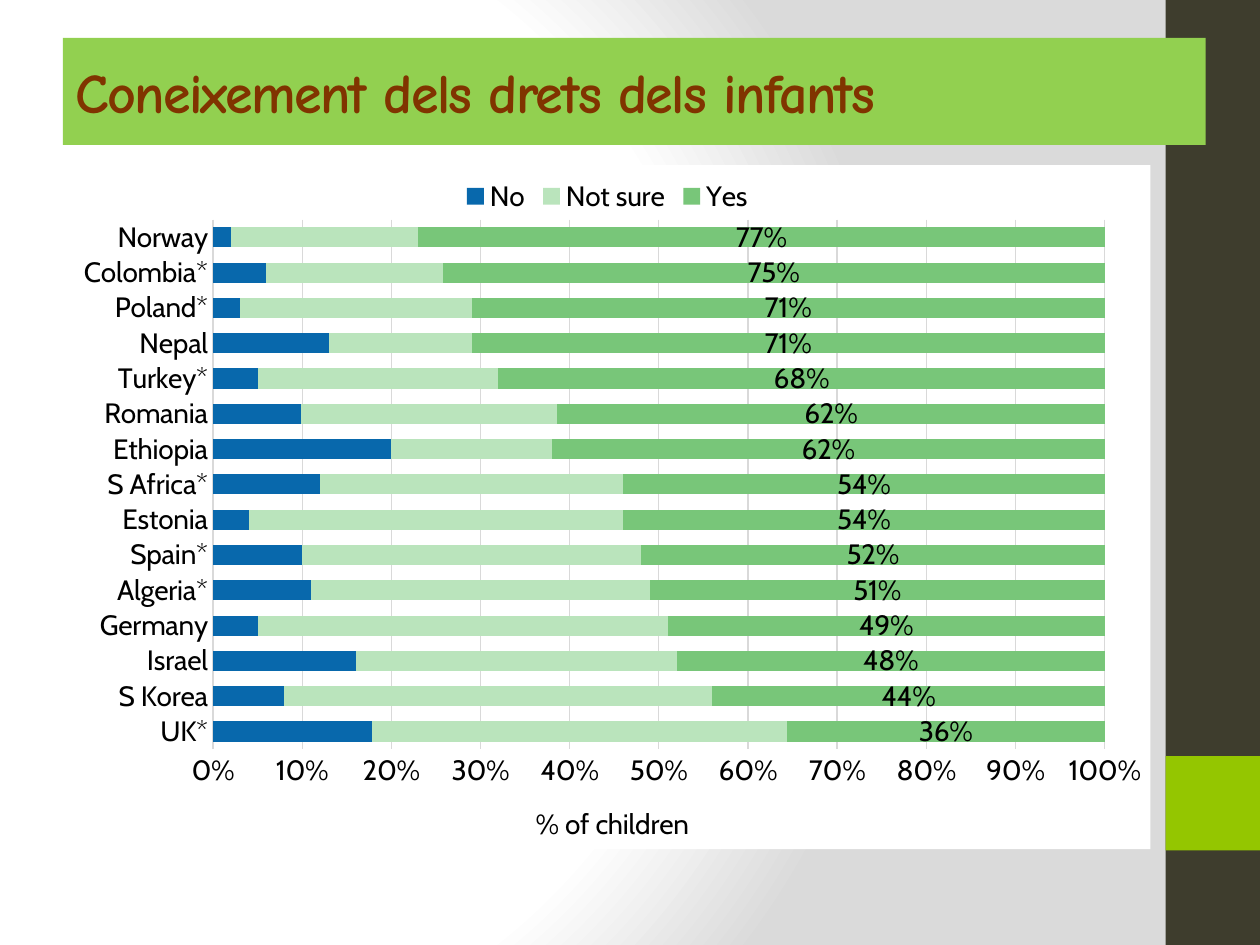
import pptx
import pptx.chart.data
import pptx.dml.color
import pptx.enum.chart
import pptx.enum.shapes
import pptx.enum.text
import pptx.oxml
import pptx.util

Inches, Pt = pptx.util.Inches, pptx.util.Pt
enum = pptx.enum.chart

COLORS = {
    "white": "FFFFFF", "grey": "DADADA", "dark": "3E3D2D", "lime": "94C600",
    "band": "92D050", "brown": "803400", "black": "000000", "grid": "D9D9D9",
    "No": "0868AC", "Not sure": "BAE4BC", "Yes": "78C679",
}
TITLE = "Coneixement dels drets dels infants"
AXIS = "% of children"
NAMES = ("No", "Not sure", "Yes")
ROWS = [  # country, then percent for each name, from the bottom up
    ("UK*", 18, 47, 36),
    ("S Korea", 8, 48, 44),
    ("Israel", 16, 36, 48),
    ("Germany", 5, 46, 49),
    ("Algeria*", 11, 38, 51),
    ("Spain*", 10, 38, 52),
    ("Estonia", 4, 42, 54),
    ("S Africa*", 12, 34, 54),
    ("Ethiopia", 20, 18, 62),
    ("Romania", 10, 29, 62),
    ("Turkey*", 5, 27, 68),
    ("Nepal", 13, 16, 71),
    ("Poland*", 3, 26, 71),
    ("Colombia*", 6, 20, 75),
    ("Norway", 2, 21, 77),
]
PLOT = {"x": 0.137, "y": 0.08, "w": 0.821, "h": 0.774}
A_NS = 'xmlns:a="http://schemas.openxmlformats.org/drawingml/2006/main"'
C_NS = 'xmlns:c="http://schemas.openxmlformats.org/drawingml/2006/chart"'


def rgb(name):
    return pptx.dml.color.RGBColor.from_string(COLORS[name])


def style(font, face="Cabin", size=16, color="black", bold=False):
    font.name, font.size, font.bold = face, Pt(size), bold
    font.color.rgb = rgb(color)


def paint(item, color):
    item.fill.solid()
    item.fill.fore_color.rgb = rgb(color)


def rect(slide, box, color):
    shape = slide.shapes.add_shape(
        pptx.enum.shapes.MSO_SHAPE.RECTANGLE, *map(Inches, box))
    shape.shadow.inherit = False
    paint(shape, color)
    shape.line.fill.background()
    return shape


def add_backdrop(slide):
    slide.background.fill.solid()
    stops = "".join(
        f'<a:gs pos="{pos * 1000}"><a:srgbClr val="{COLORS[name]}"/></a:gs>'
        for pos, name in ((0, "white"), (75, "white"), (100, "grey")))
    grad = pptx.oxml.parse_xml(
        f'<a:gradFill {A_NS} rotWithShape="1"><a:gsLst>{stops}</a:gsLst>'
        '<a:path path="circle"><a:fillToRect l="20000" t="50000" '
        'r="100000" b="50000"/></a:path></a:gradFill>')
    solid = slide.element.xpath("./p:cSld/p:bg/p:bgPr/a:solidFill")[0]
    solid.getparent().replace(solid, grad)


def add_title(slide):
    shape = rect(slide, (0.5, 0.3, 9.07, 0.85), "band")
    frame = shape.text_frame
    frame.word_wrap = True
    frame.vertical_anchor = pptx.enum.text.MSO_ANCHOR.MIDDLE
    para = frame.paragraphs[0]
    para.alignment = pptx.enum.text.PP_ALIGN.LEFT
    run = para.add_run()
    run.text = TITLE
    style(run.font, "Comic Neue", 32, "brown", True)
    run.font._element.set("spc", "-100")


def place_plot(chart):
    """Fix the inner plot area and fill the chart area white."""
    area = chart.element.xpath("./c:chart/c:plotArea")[0]
    for old in area.xpath("./c:layout"):
        area.remove(old)
    modes = "".join(f'<c:{key}Mode val="edge"/>' for key in "xy")
    sizes = "".join(f'<c:{key} val="{val}"/>' for key, val in PLOT.items())
    area.insert(0, pptx.oxml.parse_xml(
        f'<c:layout {C_NS}><c:manualLayout><c:layoutTarget val="inner"/>'
        f'{modes}{sizes}</c:manualLayout></c:layout>'))
    area.getparent().addnext(pptx.oxml.parse_xml(
        f'<c:spPr {C_NS} {A_NS}><a:solidFill><a:srgbClr '
        f'val="{COLORS["white"]}"/></a:solidFill>'
        '<a:ln><a:noFill/></a:ln></c:spPr>'))


def add_bars(slide):
    data = pptx.chart.data.CategoryChartData(number_format="0%")
    lands, *parts = zip(*ROWS)
    data.categories = lands
    for name, part in zip(NAMES, parts):
        data.add_series(name, [val / 100 for val in part])
    chart = slide.shapes.add_chart(
        enum.XL_CHART_TYPE.BAR_STACKED_100,
        *map(Inches, (0.51, 1.31, 8.62, 5.43)), data).chart
    style(chart.font)
    chart.has_title = False
    chart.has_legend = True
    chart.legend.position = enum.XL_LEGEND_POSITION.TOP
    chart.legend.include_in_layout = False
    style(chart.legend.font)

    plot = chart.plots[0]
    plot.gap_width, plot.overlap = 75, 100
    plot.vary_by_categories = False
    for series in plot.series:
        paint(series.format, series.name)
    labels = plot.series[-1].data_labels
    labels.show_value = True
    labels.number_format, labels.number_format_is_linked = "0%", False
    style(labels.font)

    cat, val = chart.category_axis, chart.value_axis
    for axis in (cat, val):
        axis.major_tick_mark = axis.minor_tick_mark = enum.XL_TICK_MARK.NONE
        style(axis.tick_labels.font)
    val.has_major_gridlines = True
    for line in (cat.format.line, val.major_gridlines.format.line):
        line.color.rgb = rgb("grid")
        line.width = Pt(0.75)
    val.format.line.fill.background()
    val.minimum_scale, val.maximum_scale, val.major_unit = 0, 1, 0.1
    val.tick_labels.number_format = "0%"
    val.tick_labels.number_format_is_linked = False
    frame = val.axis_title.text_frame
    frame.text = AXIS
    style(frame.paragraphs[0].font)
    place_plot(chart)


def main():
    deck = pptx.Presentation()
    deck.slide_width, deck.slide_height = Inches(10), Inches(7.5)
    slide = deck.slides.add_slide(deck.slide_layouts[6])
    add_backdrop(slide)
    rect(slide, (9.25, 0, 0.75, 7.5), "dark")
    rect(slide, (9.25, 6, 0.75, 0.75), "lime")
    add_title(slide)
    add_bars(slide)
    deck.save("out.pptx")


if __name__ == "__main__":
    main()
